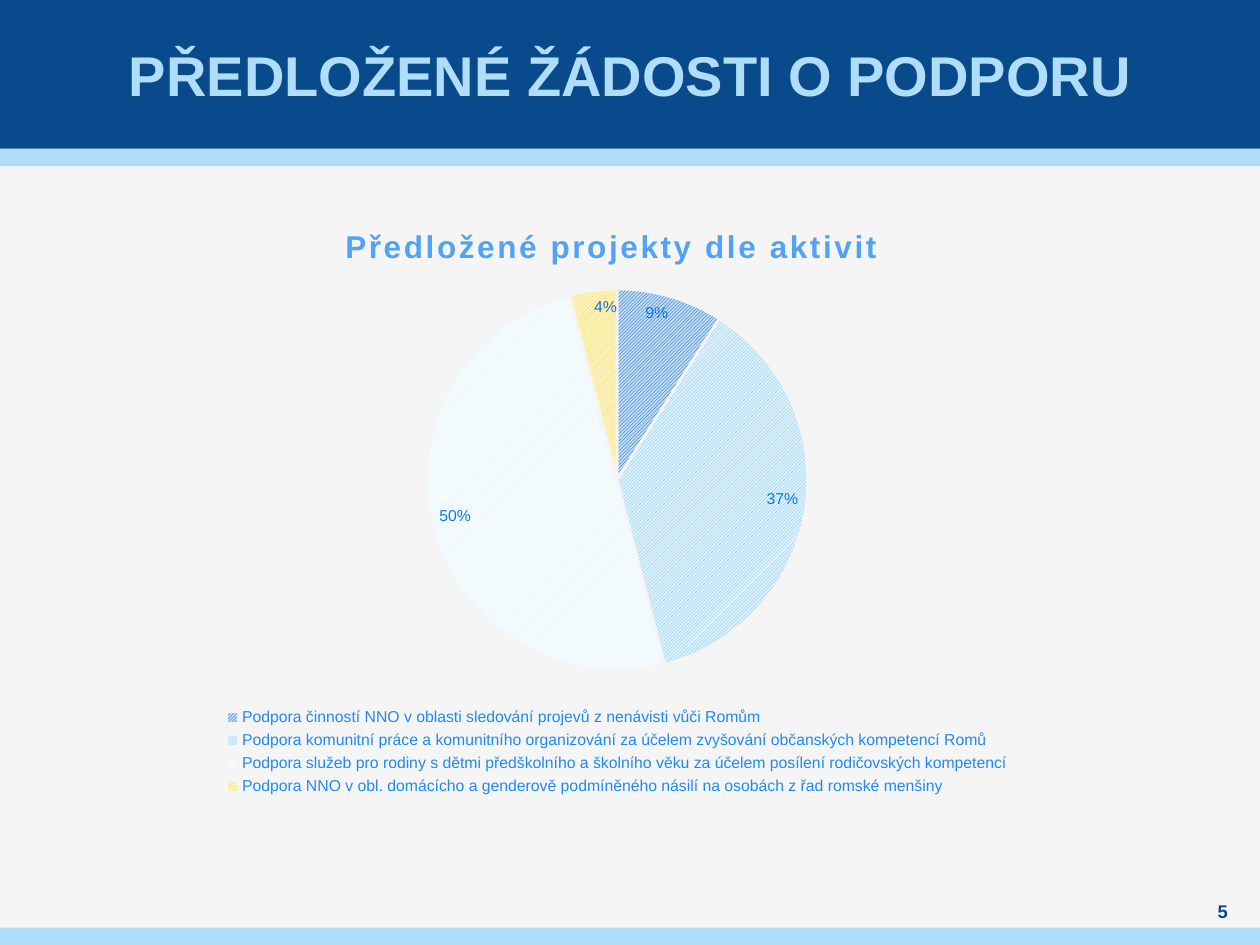
import pptx
import pptx.chart.data
import pptx.dml.color
import pptx.enum.chart
import pptx.enum.dml
import pptx.enum.shapes
import pptx.enum.text
import pptx.oxml
import pptx.oxml.ns
import pptx.util
from pptx.util import Cm

FONT = "Arial"
COLORS = {
    "background": "F5F5F5",
    "navy": "084A8B",
    "sky": "AFDDFA",
    "chart_title": "52A2F5",
    "legend": "208AF2",
    "labels": "0D78E1",
}
# activity, share in percent, pattern foreground, pattern background
ACTIVITIES = [
    ("Podpora činností NNO v oblasti sledování projevů z nenávisti vůči Romům",
     9, "084A8B", "BADBFB"),
    ("Podpora komunitní práce a komunitního organizování za účelem zvyšování "
     "občanských kompetencí Romů", 37, "5FBBF5", "DFF1FD"),
    ("Podpora služeb pro rodiny s dětmi předškolního a školního věku za účelem "
     "posílení rodičovských kompetencí", 50, "D7EEFC", "F7FCFE"),
    ("Podpora NNO v obl. domácícho a genderově podmíněného násilí na osobách "
     "z řad romské menšiny", 4, "FFCC00", "FFF5CC"),
]


def rgb(value):
    return pptx.dml.color.RGBColor.from_string(value)


def style_font(font, size, color, bold=False):
    font.name = FONT
    font.size = pptx.util.Pt(size)
    font.bold = bold
    font.color.rgb = rgb(COLORS[color])


def add_band(slide, left, top, width, height, color):
    band = slide.shapes.add_shape(
        pptx.enum.shapes.MSO_SHAPE.RECTANGLE, left, top, width, height)
    band.shadow.inherit = False
    band.fill.solid()
    band.fill.fore_color.rgb = rgb(COLORS[color])
    band.line.fill.background()


def fill_text(holder, text, size, color, align, left_margin=0):
    frame = holder.text_frame
    frame.text = text
    frame.word_wrap = True
    frame.auto_size = pptx.enum.text.MSO_AUTO_SIZE.NONE
    frame.vertical_anchor = pptx.enum.text.MSO_ANCHOR.MIDDLE
    frame.margin_left = left_margin
    frame.margin_right = frame.margin_top = frame.margin_bottom = 0
    frame.paragraphs[0].alignment = align
    style_font(frame.paragraphs[0].runs[0].font, size, color, bold=True)


def build_header(slide, left, top, width, height, stripe):
    add_band(slide, left, top + height, width, stripe, "sky")
    add_band(slide, left, top, width, height, "navy")
    heading = slide.shapes.title
    slide.shapes.element.append(heading.element)  # in front of the bands
    heading.left, heading.top = left + Cm(1.25), top
    heading.width, heading.height = width - Cm(2.25), height
    fill_text(heading, "PŘEDLOŽENÉ ŽÁDOSTI O PODPORU", 32, "sky",
              pptx.enum.text.PP_ALIGN.LEFT, Cm(1.35))


def build_footer(slide, left, top, width, height):
    add_band(slide, left, top, width, height, "sky")
    page_number = slide.shapes.add_textbox(
        left + width - Cm(1.4), top - Cm(0.58), Cm(1.3), Cm(0.5))
    fill_text(page_number, "5", 10.5, "navy", pptx.enum.text.PP_ALIGN.CENTER)


def place(chart, part_name, index, **box):
    """Insert a manual layout, in fractions of the chart area, at the index."""
    part = chart.element.find(f".//{{*}}{part_name}")
    for automatic in part.findall(pptx.oxml.ns.qn("c:layout")):
        part.remove(automatic)
    target = '<c:layoutTarget val="inner"/>' if part_name == "plotArea" else ""
    sizes = "".join(f'<c:{key} val="{value}"/>' for key, value in box.items())
    part.insert(index, pptx.oxml.parse_xml(
        f'<c:layout {pptx.oxml.ns.nsdecls("c")}><c:manualLayout>{target}'
        f'<c:xMode val="edge"/><c:yMode val="edge"/>{sizes}'
        '</c:manualLayout></c:layout>'))


def add_chart_title(chart, text):
    chart.has_title = True
    frame = chart.chart_title.text_frame
    frame.text = text
    style_font(frame.paragraphs[0].runs[0].font, 18, "chart_title", bold=True)
    for properties in chart.chart_title.element.iter(pptx.oxml.ns.qn("a:rPr")):
        properties.set("spc", "150")
    place(chart, "title", 1, x=0.18, y=0.04)


def add_legend(chart):
    chart.has_legend = True
    chart.legend.position = pptx.enum.chart.XL_LEGEND_POSITION.BOTTOM
    chart.legend.include_in_layout = False
    style_font(chart.legend.font, 9, "legend")
    place(chart, "legend", 1, x=0.04, y=0.84, w=0.92, h=0.16)


def format_slices(plot):
    plot.vary_by_categories = True
    for index, (_, _, front, back) in enumerate(ACTIVITIES):
        piece = plot.series[0].points[index].format
        piece.fill.patterned()
        piece.fill.pattern = pptx.enum.dml.MSO_PATTERN.LIGHT_UPWARD_DIAGONAL
        piece.fill.fore_color.rgb = rgb(front)
        piece.fill.back_color.rgb = rgb(back)
        piece.line.color.rgb = rgb(COLORS["background"])
        piece.line.width = pptx.util.Pt(1.5)


def add_percentages(plot):
    plot.has_data_labels = True
    labels = plot.data_labels
    labels.show_percentage = True
    labels.show_value = False
    labels.number_format = "0%"
    labels.number_format_is_linked = False
    labels.position = pptx.enum.chart.XL_LABEL_POSITION.INSIDE_END
    style_font(labels.font, 9, "labels")


def build_activity_pie(slide, left, top, width, height):
    shares = pptx.chart.data.CategoryChartData()
    shares.categories = [activity[0] for activity in ACTIVITIES]
    shares.add_series("Series 1", [activity[1] for activity in ACTIVITIES])
    chart = slide.shapes.add_chart(
        pptx.enum.chart.XL_CHART_TYPE.PIE, left, top, width, height,
        shares).chart
    style_font(chart.font, 10, "navy")
    add_chart_title(chart, "Předložené projekty dle aktivit")
    add_legend(chart)
    format_slices(chart.plots[0])
    add_percentages(chart.plots[0])
    place(chart, "plotArea", 0, x=0.28, y=0.15, w=0.44, h=0.64)


def main():
    presentation = pptx.Presentation()
    presentation.slide_width, presentation.slide_height = Cm(25.4), Cm(19.05)
    slide = presentation.slides.add_slide(presentation.slide_layouts[5])
    slide.background.fill.solid()
    slide.background.fill.fore_color.rgb = rgb(COLORS["background"])
    width = presentation.slide_width
    build_header(slide, 0, 0, width, Cm(3), Cm(0.35))
    build_footer(slide, 0, Cm(18.7), width, Cm(0.35))
    build_activity_pie(slide, Cm(3.7), Cm(3.94), Cm(17.48), Cm(12.2))
    presentation.save("out.pptx")


if __name__ == "__main__":
    main()
